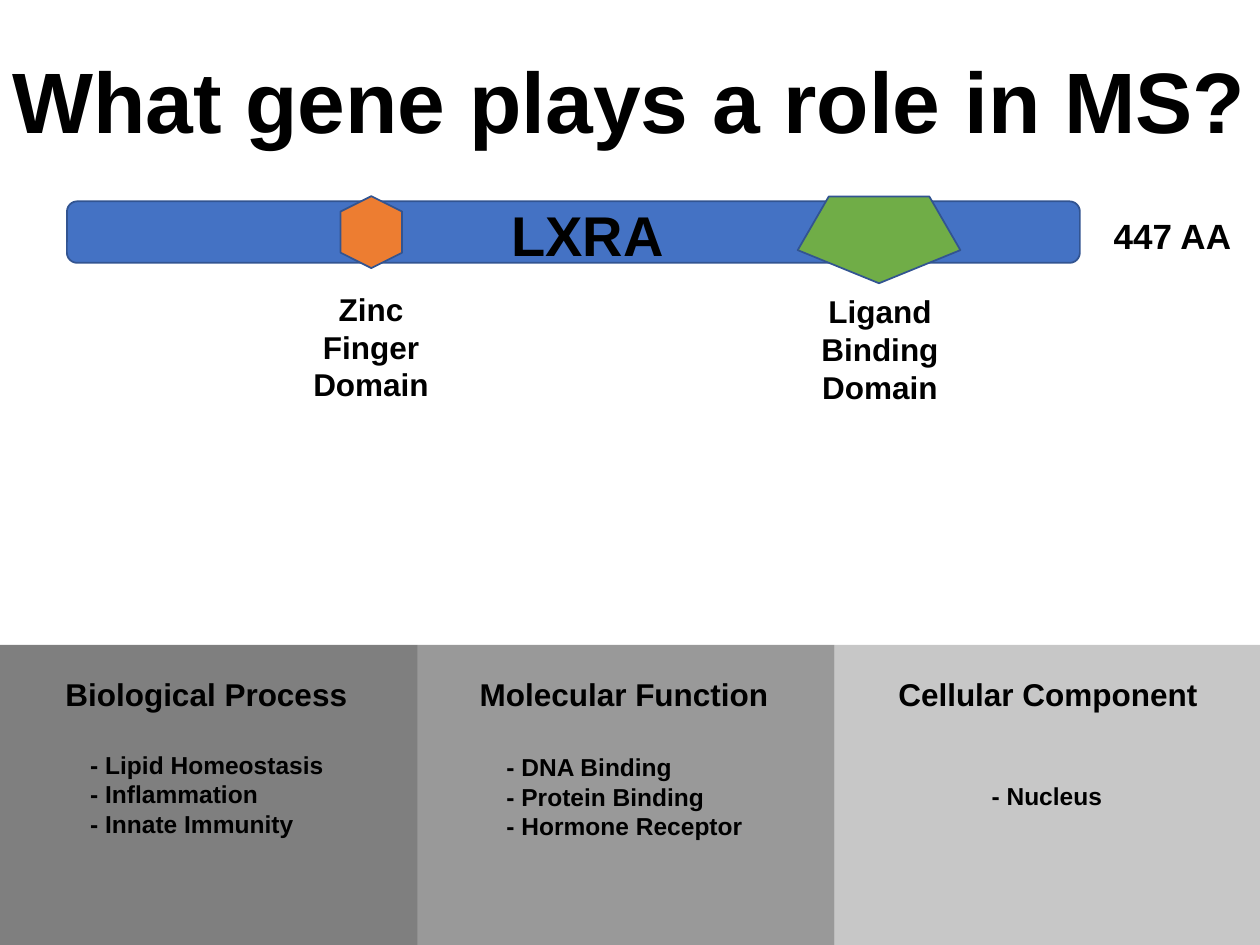
from lxml import etree
from pptx import Presentation
from pptx import util as u
from pptx.dml.color import RGBColor
from pptx.enum import shapes, text
from pptx.oxml.ns import qn

BLACK = RGBColor(0x00, 0x00, 0x00)
BLUE = RGBColor(0x44, 0x72, 0xC4)
ORANGE = RGBColor(0xED, 0x7D, 0x31)
GREEN = RGBColor(0x70, 0xAD, 0x47)
OUTLINE = RGBColor(0x32, 0x54, 0x91)

PANEL_TOP = 13
PANEL_WIDTH = 8.41
PANELS = [
    (50, 8.41, "Biological Process", (1.07, 6.25),
     ["- Lipid Homeostasis", "- Inflammation", "- Innate Immunity"],
     (1.57, 14.99, 5.23, 2.06)),
    (40, 8.41, "Molecular Function", (9.42, 6.4),
     ["- DNA Binding", "- Protein Binding", "- Hormone Receptor"],
     (9.96, 15.04, 5.28, 2.06)),
    (22, 8.71, "Cellular Component", (17.86, 6.6),
     ["- Nucleus"], (19.74, 15.62, 2.74, 0.86)),
]


def cm(box):
    return [u.Cm(v) for v in box]


def add_text(s, box, lines, size, wrap=False, align=text.PP_ALIGN.LEFT,
             anchor=text.MSO_ANCHOR.TOP, spacing=None):
    tf = s.shapes.add_textbox(*cm(box)).text_frame
    tf.word_wrap = wrap
    tf.vertical_anchor = anchor
    for i, line in enumerate(lines):
        p = tf.paragraphs[0] if i == 0 else tf.add_paragraph()
        p.alignment = align
        p.line_spacing = spacing
        r = p.add_run()
        r.text = line
        r.font.name = "Arial"
        r.font.size = u.Pt(size)
        r.font.bold = True
        r.font.color.rgb = BLACK


def add_shape(s, kind, box, fill, rotation=0):
    sp = s.shapes.add_shape(kind, *cm(box))
    sp.shadow.inherit = False
    sp.rotation = rotation
    sp.fill.solid()
    sp.fill.fore_color.rgb = fill
    sp.line.color.rgb = OUTLINE
    sp.line.width = u.Pt(1)
    return sp


def add_panel(s, box, opacity):
    sp = add_shape(s, shapes.MSO_SHAPE.RECTANGLE, box, BLACK)
    sp.line.fill.background()
    color = sp.fill._xPr.find(qn("a:solidFill")).find(qn("a:srgbClr"))
    etree.SubElement(color, qn("a:alpha")).set("val", str(opacity * 1000))


def add_gene(s):
    kinds = shapes.MSO_SHAPE
    add_shape(s, kinds.ROUNDED_RECTANGLE, (1.35, 4.06, 20.42, 1.24), BLUE)
    add_shape(s, kinds.HEXAGON, (6.76, 4.06, 1.45, 1.24), ORANGE, 90)
    add_shape(s, kinds.REGULAR_PENTAGON, (16.08, 3.96, 3.28, 1.75), GREEN, 180)
    add_text(s, (10.06, 3.91, 3.61, 1.63), ["LXRA"], 32)
    add_text(s, (22.2, 4.19, 2.9, 1.12), ["447 AA"], 20)
    for label, x, y in [("Zinc Finger Domain", 5.79, 5.72),
                        ("Ligand Binding Domain", 16.05, 5.77)]:
        add_text(s, (x, y, 3.38, 2.57), [label], 18, wrap=True,
                 align=text.PP_ALIGN.CENTER)


def add_ontology(s):
    for i, (opacity, width, heading, (x, w), items, box) in enumerate(PANELS):
        add_panel(s, (i * PANEL_WIDTH, PANEL_TOP, width, 6.05), opacity)
        add_text(s, (x, 13.49, w, 1.02), [heading], 18)
        add_text(s, box, items, 14)


def main():
    prs = Presentation()
    prs.slide_width, prs.slide_height = u.Cm(25.4), u.Cm(19.05)
    s = prs.slides.add_slide(prs.slide_layouts[6])
    add_text(s, (0, 0.3, 25.4, 3.68), ["What gene plays a role in MS?"], 49,
             wrap=True, anchor=text.MSO_ANCHOR.MIDDLE, spacing=0.9)
    add_gene(s)
    add_ontology(s)
    prs.save("out.pptx")


if __name__ == "__main__":
    main()
